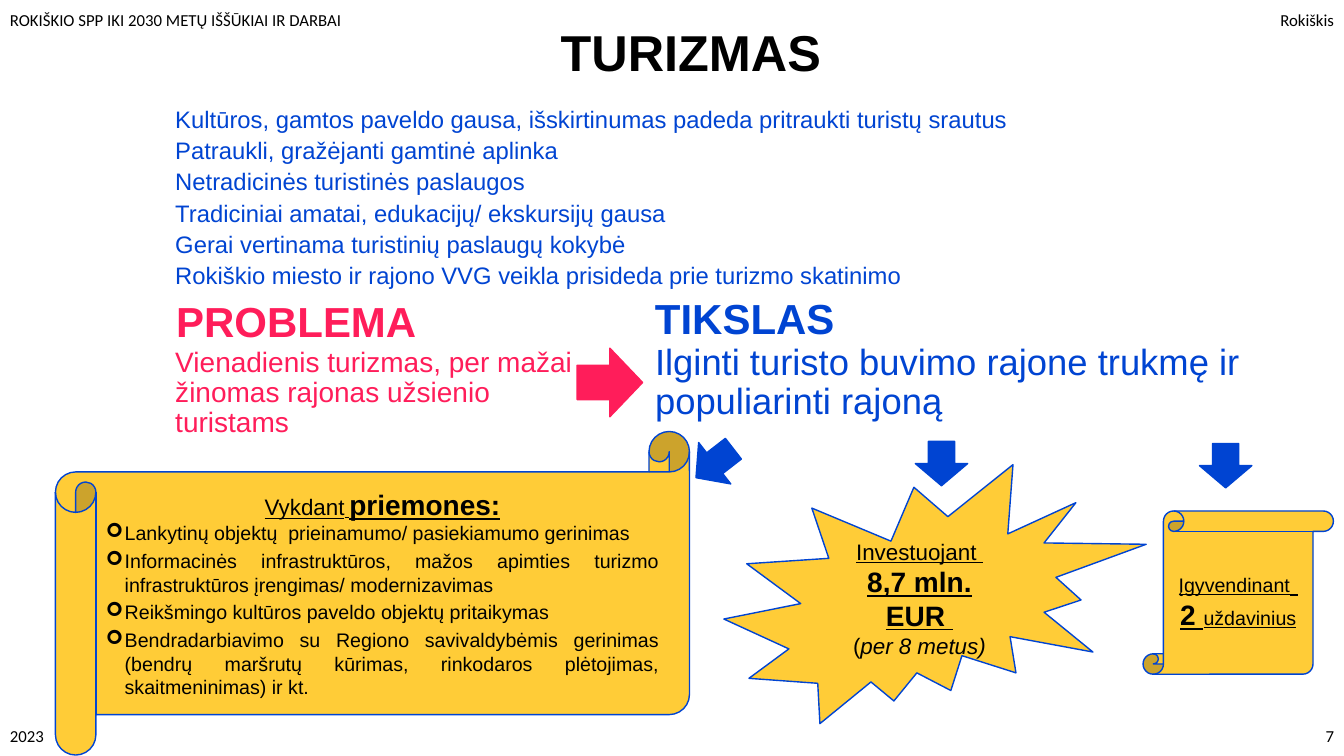
from lxml.etree import SubElement
from pptx import Presentation
from pptx.dml.color import RGBColor
from pptx.enum.shapes import MSO_SHAPE
from pptx.enum.text import MSO_ANCHOR, PP_ALIGN
from pptx.oxml.ns import qn
from pptx.util import Pt

BLACK = RGBColor(0, 0, 0)
BLUE = RGBColor(0x00, 0x44, 0xD2)
PINK = RGBColor(0xFF, 0x1D, 0x5A)
GOLD = RGBColor(0xFF, 0xCC, 0x37)
LEFT, RIGHT = PP_ALIGN.LEFT, PP_ALIGN.RIGHT
CENTER, JUSTIFY = PP_ALIGN.CENTER, PP_ALIGN.JUSTIFY
TOP, MIDDLE, BOTTOM = MSO_ANCHOR.TOP, MSO_ANCHOR.MIDDLE, MSO_ANCHOR.BOTTOM

STRENGTHS = [
    "Kultūros, gamtos paveldo gausa, išskirtinumas padeda pritraukti turistų srautus",
    "Patraukli, gražėjanti gamtinė aplinka",
    "Netradicinės turistinės paslaugos",
    "Tradiciniai amatai, edukacijų/ ekskursijų gausa",
    "Gerai vertinama turistinių paslaugų kokybė",
    "Rokiškio miesto ir rajono VVG veikla prisideda prie turizmo skatinimo",
]
MEASURES = [
    "Lankytinų objektų  prieinamumo/ pasiekiamumo gerinimas",
    "Informacinės infrastruktūros, mažos apimties turizmo infrastruktūros įrengimas/ modernizavimas",
    "Reikšmingo kultūros paveldo objektų pritaikymas",
    "Bendradarbiavimo su Regiono savivaldybėmis gerinimas (bendrų maršrutų kūrimas, "
    "rinkodaros plėtojimas, skaitmeninimas) ir kt.",
]


def write(frame, *runs, first=False, align=LEFT, spacing=None, before=0, after=0,
          bullet=None, indent=13.5, font="Arial", color=BLACK):
    para = frame.paragraphs[0] if first else frame.add_paragraph()
    para.alignment = align
    if spacing:
        para.line_spacing = spacing
    if before:
        para.space_before = Pt(before)
    if after:
        para.space_after = Pt(after)
    if bullet:
        props = para._p.get_or_add_pPr()
        props.set("marL", str(Pt(indent)))
        props.set("indent", str(-Pt(indent)))
        SubElement(props, qn("a:buFont"), typeface="Wingdings")
        SubElement(props, qn("a:buChar"), char=bullet)
    for words, size, style in runs:
        run = para.add_run()
        run.text = words
        run.font.name, run.font.size = font, Pt(size)
        run.font.color.rgb = color
        run.font.bold = "b" in style
        run.font.italic = "i" in style
        run.font.underline = "u" in style


def label(slide, box, lines, size, style="", anchor=BOTTOM, bottom=3.6, before=0, **form):
    frame = slide.shapes.add_textbox(*map(Pt, box)).text_frame
    frame.word_wrap = True
    frame.vertical_anchor = anchor
    frame.margin_bottom = Pt(bottom)
    for row, line in enumerate(lines):
        write(frame, (line, size, style), first=row == 0, before=before if row else 0, **form)


def block(slide, kind, box, fill, edge, turn=0):
    shape = slide.shapes.add_shape(kind, *map(Pt, box))
    shape.shadow.inherit = False
    shape.fill.solid()
    shape.fill.fore_color.rgb = fill
    shape.line.color.rgb = edge
    shape.line.width = Pt(1)
    shape.rotation = turn
    frame = shape.text_frame
    frame.word_wrap = True
    frame.vertical_anchor = MIDDLE
    return frame


def arrow(slide, box, color=BLUE, turn=0):
    block(slide, MSO_SHAPE.DOWN_ARROW, box, color, color, turn)


def margins(slide, box):
    x, y, wide, high = box
    base = y + high - 28.8
    form = {"font": "Calibri", "anchor": MIDDLE}
    label(slide, (x, y, 324, 28.8), ["ROKIŠKIO SPP IKI 2030 METŲ IŠŠŪKIAI IR DARBAI"], 12, **form)
    label(slide, (x, base, 216, 28.8), ["2023"], 12, **form)
    label(slide, (x + wide - 216, base, 216, 28.8), ["7"], 12, align=RIGHT, **form)
    label(slide, (x + wide - 211, y + 3.6, 211, 21.6), ["Rokiškis"], 12,
          align=RIGHT, font="Calibri", anchor=TOP)


def heading(slide, box):
    x, y, wide, _ = box
    label(slide, (x, y, wide, 51), ["TURIZMAS"], 36, "b", anchor=TOP, align=CENTER)
    label(slide, (x - 19.4, y + 103.7, 749.5, 116.6), STRENGTHS, 17,
          bottom=24.6, spacing=0.9, before=4, color=BLUE)


def aims(slide, box):
    x, y, wide, _ = box
    right = x + 342.7
    label(slide, (x + 0.7, y + 10, 291, 42.5), ["PROBLEMA"], 30, "b", spacing=0.9, color=PINK)
    label(slide, (x, y + 39.6, 312, 78.5),
          ["Vienadienis turizmas, per mažai žinomas rajonas užsienio turistams"], 20,
          spacing=0.9, color=PINK)
    arrow(slide, (x + 293, y + 51.1, 49, 46.8), PINK, 270)
    label(slide, (right, y, 291, 50.4), ["TIKSLAS"], 30, "b", spacing=0.9, color=BLUE)
    label(slide, (right, y + 28, wide - 342.7, 78.5),
          ["Ilginti turisto buvimo rajone trukmę ir populiarinti rajoną"], 26,
          spacing=0.9, color=BLUE)


def measures(slide, box):
    frame = block(slide, MSO_SHAPE.HORIZONTAL_SCROLL, box, GOLD, BLUE)
    write(frame, ("Vykdant", 16, "u"), (" ", 12, "bu"), ("priemones:", 20, "bu"),
          first=True, align=CENTER)
    for line in MEASURES:
        write(frame, (line, 14, ""), align=JUSTIFY, after=3, bullet="➢")
    x, y, wide, _ = box
    arrow(slide, (x + wide - 0.7, y + 5.8, 37.4, 33.8), turn=52.2)


def budget(slide, box):
    x, y, _, _ = box
    arrow(slide, (x + 136.8, y - 16.6, 37.4, 31.7))
    frame = block(slide, MSO_SHAPE.EXPLOSION2, box, GOLD, BLUE)
    write(frame, ("Investuojant ", 16, "u"), first=True, align=CENTER)
    write(frame, ("8,7 mln. EUR ", 20, "bu"), align=CENTER)
    write(frame, ("(", 16, ""), ("per 8 metus)", 16, "i"), align=CENTER)


def tasks(slide, box):
    x, y, _, _ = box
    arrow(slide, (x + 40.3, y - 48.2, 37.4, 31.7))
    frame = block(slide, MSO_SHAPE.VERTICAL_SCROLL, box, GOLD, BLUE)
    write(frame, ("Įgyvendinant", 14, "u"), (" ", 20, "bu"), first=True, align=CENTER)
    write(frame, ("2 ", 20, "bu"), ("uždavinius", 14, "u"), align=CENTER)


def main():
    deck = Presentation()
    deck.slide_width, deck.slide_height = Pt(960), Pt(540)
    slide = deck.slides.add_slide(deck.slide_layouts[6])
    margins(slide, (0, 0, 960, 540))
    heading(slide, (137.5, 11.5, 712, 220))
    aims(slide, (118.1, 198.7, 824.4, 118))
    measures(slide, (39.6, 308.2, 452.9, 231.1))
    tasks(slide, (816.5, 365, 136, 116.6))
    budget(slide, (517, 331.9, 301.7, 185))
    deck.save("out.pptx")


if __name__ == "__main__":
    main()
